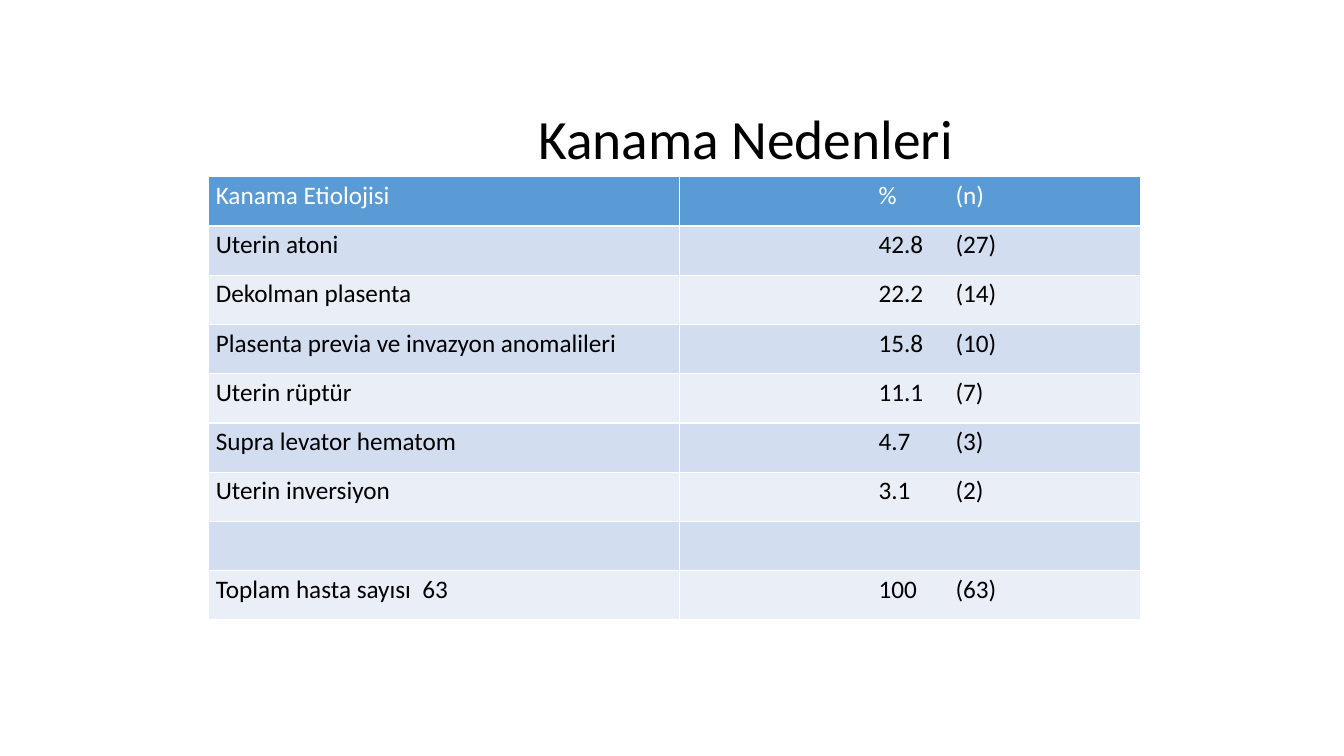
import pptx
import pptx.dml.color
import pptx.enum.text
import pptx.oxml.ns
import pptx.util
from lxml import etree

Pt = pptx.util.Pt
FONT = "Calibri"
COLORS = {
    "header": "5B9BD5",
    "dark_band": "D2DEEF",
    "light_band": "EAEFF7",
    "header_text": "FFFFFF",
    "text": "000000",
}
CAUSES = [
    ("Kanama Etiolojisi", "%\t(n)"),
    ("Uterin atoni", "42.8\t(27)"),
    ("Dekolman plasenta", "22.2\t(14)"),
    ("Plasenta previa ve invazyon anomalileri", "15.8\t(10)"),
    ("Uterin rüptür", "11.1\t(7)"),
    ("Supra levator hematom", "4.7\t(3)"),
    ("Uterin inversiyon", "3.1\t(2)"),
    ("", ""),
    ("Toplam hasta sayısı  63", "100\t(63)"),
]
ROW_HEIGHT = 35.2
CELL_INSET = 5.2
FIGURES_INSET = 142
COUNT_TAB = 55


def rgb(name):
    return pptx.dml.color.RGBColor.from_string(COLORS[name])


def format_text(paragraph, size, color):
    paragraph.alignment = pptx.enum.text.PP_ALIGN.LEFT
    for font in [paragraph.font] + [run.font for run in paragraph.runs]:
        font.name = FONT
        font.size = Pt(size)
        font.bold = False
        font.color.rgb = rgb(color)


def add_tab_stop(paragraph, position):
    properties = paragraph._p.get_or_add_pPr()
    stops = etree.Element(pptx.oxml.ns.qn("a:tabLst"))
    etree.SubElement(stops, pptx.oxml.ns.qn("a:tab"), pos=str(Pt(position)), algn="l")
    properties.insert(0, stops)


def place_title(slide, left, top, width, height):
    title = slide.shapes.title
    title.left, title.top, title.width, title.height = map(Pt, (left, top, width, height))
    frame = title.text_frame
    frame.text = "Kanama Nedenleri"
    frame.vertical_anchor = pptx.enum.text.MSO_ANCHOR.MIDDLE
    frame.margin_left = Pt(213)
    heading = frame.paragraphs[0]
    heading.line_spacing = 0.9
    format_text(heading, 39.6, "text")


def place_causes(slide, left, top, column_widths):
    """Draw the banded table of bleeding causes with its percent and count figures."""
    height = ROW_HEIGHT * len(CAUSES)
    causes = slide.shapes.add_table(
        len(CAUSES), len(column_widths),
        Pt(left), Pt(top), Pt(sum(column_widths)), Pt(height)).table
    for column, width in zip(causes.columns, column_widths):
        column.width = Pt(width)
    for row_index, entries in enumerate(CAUSES):
        causes.rows[row_index].height = Pt(ROW_HEIGHT)
        if row_index == 0:
            band, ink = "header", "header_text"
        else:
            band, ink = ("dark_band" if row_index % 2 else "light_band"), "text"
        for column_index, entry in enumerate(entries):
            cell = causes.cell(row_index, column_index)
            cell.fill.solid()
            cell.fill.fore_color.rgb = rgb(band)
            cell.margin_left = Pt(FIGURES_INSET if column_index else CELL_INSET)
            cell.margin_right = Pt(CELL_INSET)
            cell.margin_top = cell.margin_bottom = Pt(2.6)
            line = cell.text_frame.paragraphs[0]
            line.text = entry
            format_text(line, 18, ink)
            if column_index:
                add_tab_stop(line, COUNT_TAB)


def main():
    deck = pptx.Presentation()
    deck.slide_width, deck.slide_height = Pt(960), Pt(540)
    slide = deck.slides.add_slide(deck.slide_layouts.get_by_name("Title Only"))
    place_title(slide, 171.4, 76.3, 620.6, 49)
    place_causes(slide, 149, 126.2, (336.6, 329))
    deck.save("out.pptx")


if __name__ == "__main__":
    main()
